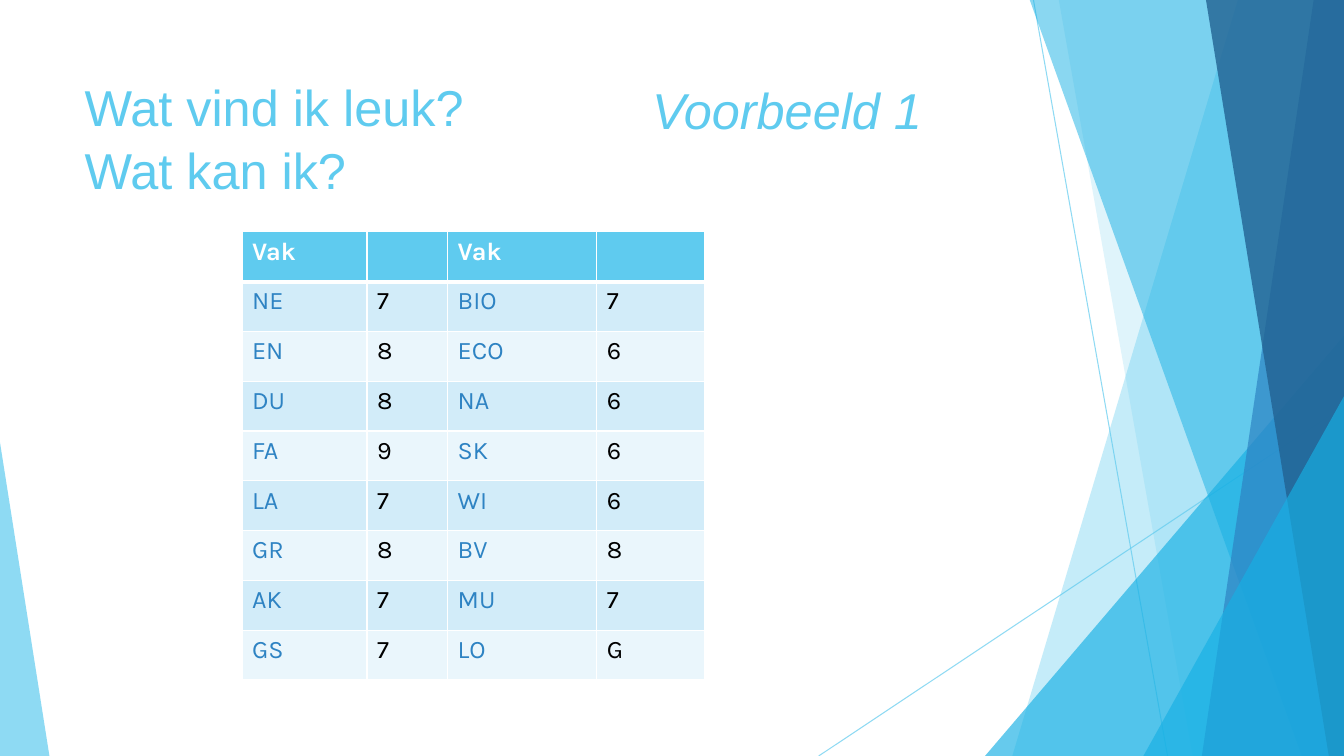
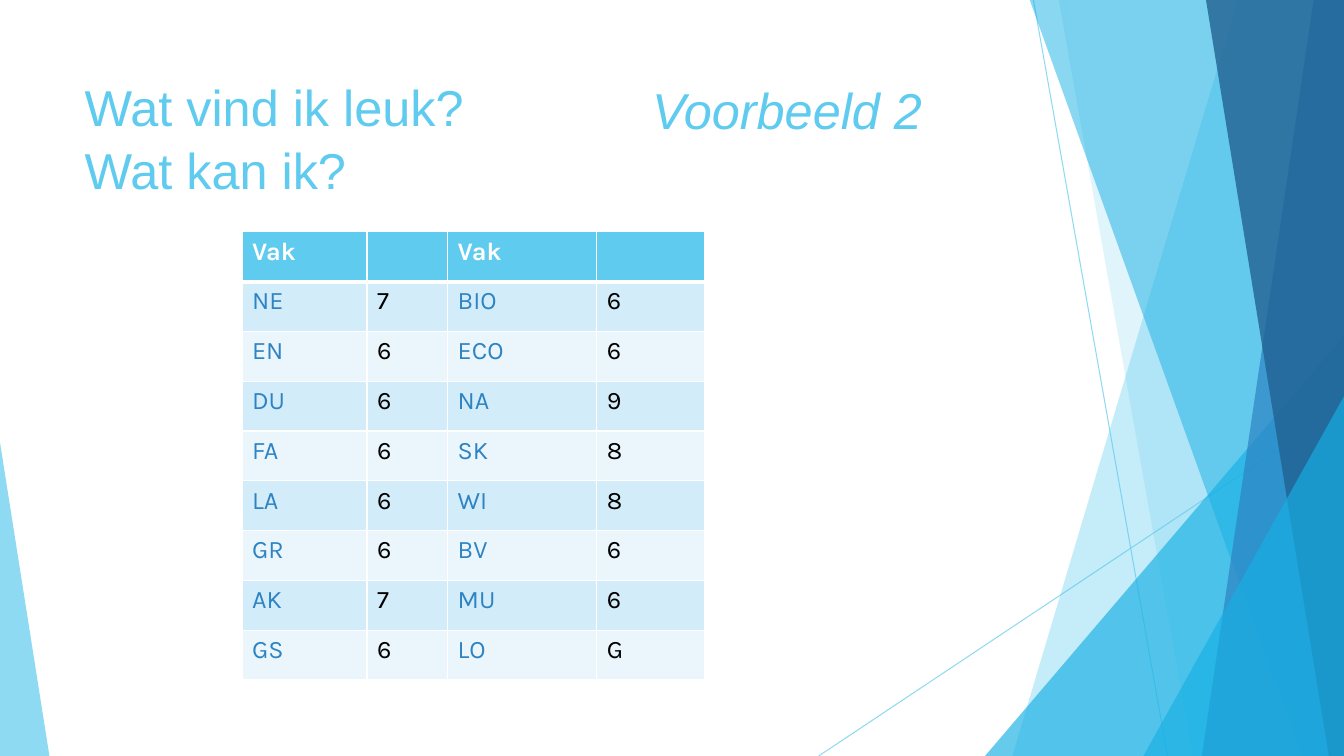
from dataclasses import dataclass

from lxml import etree
from pptx import Presentation
from pptx import util as u
from pptx.dml.color import RGBColor
from pptx.enum import shapes, text
from pptx.oxml.ns import qn

EMU_PER_PX = 9144  # 100 px to the inch
SLIDE_WIDTH, SLIDE_HEIGHT = 1333, 750


def px(length: int) -> u.Emu:
    return u.Emu(length * EMU_PER_PX)


# Theme
@dataclass(frozen=True)
class Theme:
    sky: str = "5FCBEF"
    cyan: str = "17B0E4"
    blue: str = "2E83C3"
    navy: str = "226292"
    white: str = "FFFFFF"
    black: str = "000000"
    row_fills: tuple[str, str] = ("D2ECF9", "EAF6FC")
    heading_font: str = "Arial"
    table_font: str = "Karla"
    heading_size: int = 36
    table_size: int = 18
    heading_spacing: float = 1.05
    hairline: float = 0.75
    border: int = 1
    header_border: int = 3


THEME = Theme()


# Backdrop parts
@dataclass(frozen=True)
class Ray:
    start: tuple[int, int]
    end: tuple[int, int]


@dataclass(frozen=True)
class Band:
    """Fills from a slanted left edge to the right side of the slide."""
    top_x: int
    bottom_x: int
    color: str
    opacity: int


@dataclass(frozen=True)
class Wedge:
    """Triangle standing on the bottom of the slide."""
    left: int
    top: int
    width: int
    apex: int
    color: str
    opacity: int


RAYS = [Ray((1025, 0), (1158, 750)), Ray((1333, 403), (812, 750))]
FACETS = [
    Band(1228, 1004, THEME.sky, 36),
    Band(1050, 1183, THEME.sky, 20),
    Wedge(977, 333, 356, 1, THEME.cyan, 66),
    Band(1021, 1291, THEME.cyan, 50),
    Band(1303, 1192, THEME.blue, 70),
    Band(1196, 1318, THEME.navy, 80),
    Wedge(1134, 393, 199, 1, THEME.cyan, 66),
    Wedge(0, 439, 49, 0, THEME.sky, 70),
]


# Slide content
@dataclass(frozen=True)
class GradeSlide:
    label: str
    left_grades: str
    right_grades: str


TITLE = "Wat vind ik leuk? \vWat kan ik?"
HEADER = ("Vak", "", "Vak", "")
LEFT_SUBJECTS = ("NE", "EN", "DU", "FA", "LA", "GR", "AK", "GS")
RIGHT_SUBJECTS = ("BIO", "ECO", "NA", "SK", "WI", "BV", "MU", "LO")
COLUMN_WIDTHS = (124, 80, 148, 107)
TABLE_LEFT, TABLE_TOP, TABLE_HEIGHT = 240, 230, 445
GRADE_SLIDES = [
    GradeSlide("Voorbeeld 1", "78897877", "7666687G"),
    GradeSlide("Voorbeeld 2", "76666676", "6698866G"),
]


def rgb(color: str) -> RGBColor:
    return RGBColor.from_string(color)


def set_opacity(shape, percent: int) -> None:
    for color in shape.element.spPr.iter(qn("a:srgbClr")):
        etree.SubElement(color, qn("a:alpha")).set("val", str(percent * 1000))


def draw_ray(group, ray: Ray) -> None:
    line = group.shapes.add_connector(
        shapes.MSO_CONNECTOR.STRAIGHT, *map(px, ray.start + ray.end))
    line.line.color.rgb = rgb(THEME.sky)
    line.line.width = u.Pt(THEME.hairline)
    set_opacity(line, 70)
    etree.SubElement(line.element.spPr, qn("a:effectLst"))


def draw_facet(group, facet: Band | Wedge) -> None:
    if isinstance(facet, Band):
        builder = group.shapes.build_freeform(facet.top_x, -1, scale=EMU_PER_PX)
        builder.add_line_segments([(SLIDE_WIDTH, -1), (SLIDE_WIDTH, SLIDE_HEIGHT),
                                   (facet.bottom_x, SLIDE_HEIGHT)])
        shape = builder.convert_to_shape()
    else:
        shape = group.shapes.add_shape(
            shapes.MSO_SHAPE.ISOSCELES_TRIANGLE, px(facet.left), px(facet.top),
            px(facet.width), px(SLIDE_HEIGHT - facet.top))
        shape.adjustments[0] = facet.apex
    shape.shadow.inherit = False
    shape.fill.solid()
    shape.fill.fore_color.rgb = rgb(facet.color)
    shape.line.fill.background()
    set_opacity(shape, facet.opacity)


def add_backdrop(slide) -> None:
    """Draw the backdrop as a group and move it behind the slide's layout."""
    group = slide.shapes.add_group_shape()
    for ray in RAYS:
        draw_ray(group, ray)
    for facet in FACETS:
        draw_facet(group, facet)
    for number, properties in enumerate(group.element.iter(qn("p:cNvPr")), 100):
        properties.set("id", str(number))
    slide.slide_layout.shapes.element.insert(2, group.element)


def set_heading(shape, box: tuple[int, int, int, int], words: str,
                italic: bool = False) -> None:
    shape.left, shape.top, shape.width, shape.height = map(px, box)
    frame = shape.text_frame
    frame.text = words
    frame.word_wrap = True
    frame.auto_size = text.MSO_AUTO_SIZE.NONE
    frame.vertical_anchor = text.MSO_ANCHOR.TOP
    paragraph = frame.paragraphs[0]
    paragraph.alignment = text.PP_ALIGN.LEFT
    paragraph.line_spacing = THEME.heading_spacing
    for run in paragraph.runs:
        run.font.name = THEME.heading_font
        run.font.size = u.Pt(THEME.heading_size)
        run.font.italic = italic
        run.font.color.rgb = rgb(THEME.sky)


# Table
def set_borders(cell, top: int, bottom: int) -> None:
    properties = cell._tc.get_or_add_tcPr()
    widths = {"a:lnL": THEME.border, "a:lnR": THEME.border,
              "a:lnT": top, "a:lnB": bottom}
    for position, (tag, width) in enumerate(widths.items()):
        line = etree.Element(qn(tag), w=str(u.Pt(width)))
        fill = etree.SubElement(line, qn("a:solidFill"))
        etree.SubElement(fill, qn("a:srgbClr")).set("val", THEME.white)
        properties.insert(position, line)


def fill_cell(cell, words: str, row: int, column: int) -> None:
    is_header = row == 0
    cell.fill.solid()
    cell.fill.fore_color.rgb = rgb(
        THEME.sky if is_header else THEME.row_fills[(row - 1) % 2])
    set_borders(cell, THEME.header_border if row == 1 else THEME.border,
                THEME.header_border if is_header else THEME.border)
    cell.text_frame.text = words
    body_color = THEME.black if column % 2 else THEME.blue
    for run in cell.text_frame.paragraphs[0].runs:
        run.font.name = THEME.table_font
        run.font.size = u.Pt(THEME.table_size)
        run.font.bold = is_header
        run.font.color.rgb = rgb(THEME.white if is_header else body_color)


def add_grade_table(slide, content: GradeSlide) -> None:
    rows = [HEADER, *zip(LEFT_SUBJECTS, content.left_grades,
                         RIGHT_SUBJECTS, content.right_grades)]
    table = slide.shapes.add_table(
        len(rows), len(HEADER), px(TABLE_LEFT), px(TABLE_TOP),
        px(sum(COLUMN_WIDTHS)), px(TABLE_HEIGHT)).table
    table.horz_banding = False
    for column, width in zip(table.columns, COLUMN_WIDTHS):
        column.width = px(width)
    for row, values in enumerate(rows):
        for column, words in enumerate(values):
            fill_cell(table.cell(row, column), words, row, column)


def add_grade_slide(presentation, layout, content: GradeSlide):
    slide = presentation.slides.add_slide(layout)
    set_heading(slide.shapes.title, (74, 67, 425, 159), TITLE)
    add_grade_table(slide, content)
    label_box = (637, 71, 307, 74)
    label = slide.shapes.add_textbox(*map(px, label_box))
    set_heading(label, label_box, content.label, italic=True)
    return slide


def main() -> None:
    presentation = Presentation()
    presentation.slide_width = px(SLIDE_WIDTH)
    presentation.slide_height = px(SLIDE_HEIGHT)
    layout = presentation.slide_layouts.get_by_name("Title Only")
    slides = [add_grade_slide(presentation, layout, content)
              for content in GRADE_SLIDES]
    add_backdrop(slides[0])
    presentation.save("out.pptx")


if __name__ == "__main__":
    main()
